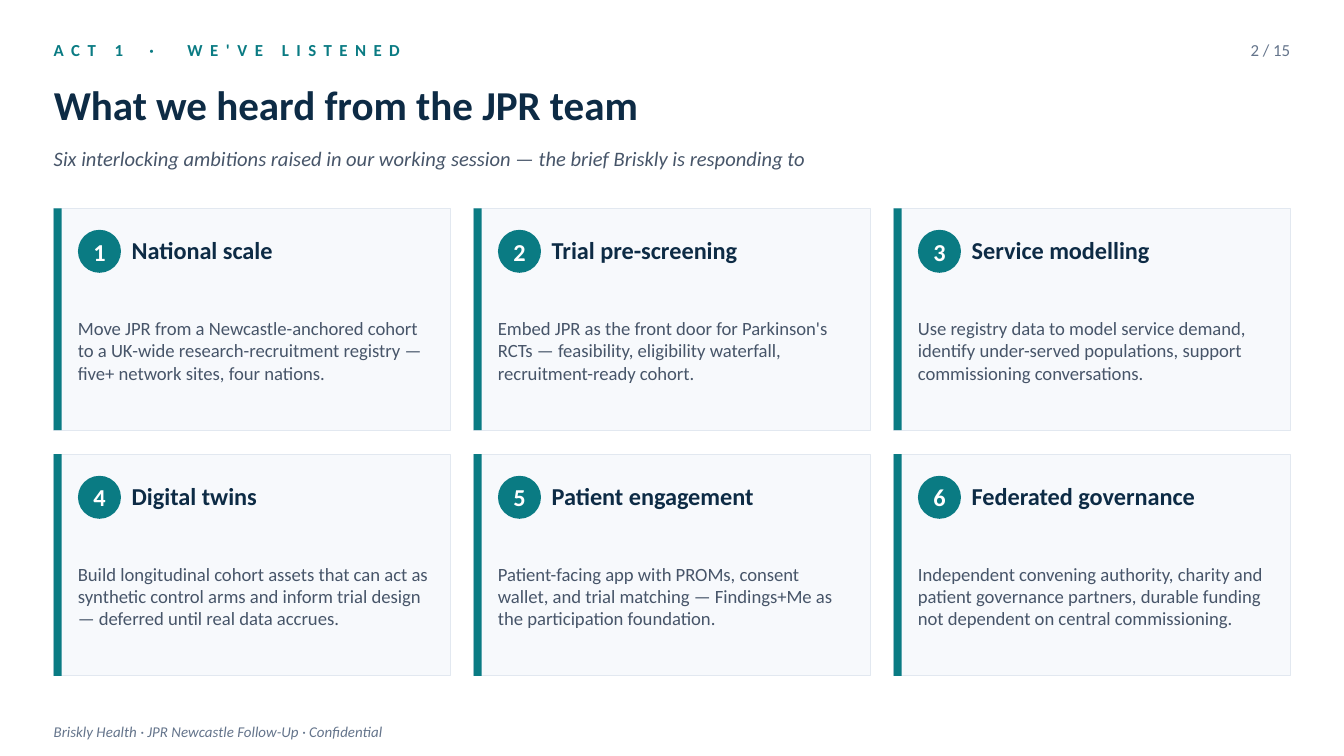
from pptx import Presentation
from pptx.dml.color import RGBColor as RGB
from pptx.enum.shapes import MSO_SHAPE as SHAPE
from pptx.enum.text import MSO_ANCHOR as ANCHOR, MSO_AUTO_SIZE as AUTO, PP_ALIGN as ALIGN
from pptx.util import Inches, Pt

COLORS = {
    "teal": "0A7B83", "navy": "0D2B45", "slate": "475569", "grey": "64748B",
    "card": "F7F9FC", "border": "E2E8F0", "white": "FFFFFF",
}
CARDS = [
    ("National scale", "Move JPR from a Newcastle-anchored cohort to a UK-wide "
     "research-recruitment registry — five+ network sites, four nations."),
    ("Trial pre-screening", "Embed JPR as the front door for Parkinson's RCTs — "
     "feasibility, eligibility waterfall, recruitment-ready cohort."),
    ("Service modelling", "Use registry data to model service demand, identify "
     "under-served populations, support commissioning conversations."),
    ("Digital twins", "Build longitudinal cohort assets that can act as synthetic "
     "control arms and inform trial design — deferred until real data accrues."),
    ("Patient engagement", "Patient-facing app with PROMs, consent wallet, and trial "
     "matching — Findings+Me as the participation foundation."),
    ("Federated governance", "Independent convening authority, charity and patient "
     "governance partners, durable funding not dependent on central commissioning."),
]


def write(sp, runs, size, color, bold=False, italic=False, align=ALIGN.LEFT):
    """Fill a shape with one paragraph made of the given runs, without insets."""
    tf = sp.text_frame
    tf.word_wrap = True
    tf.auto_size = AUTO.NONE
    tf.vertical_anchor = ANCHOR.MIDDLE
    tf.margin_left = tf.margin_right = tf.margin_top = tf.margin_bottom = 0
    p = tf.paragraphs[0]
    p.alignment = align
    for text in runs:
        r = p.add_run()
        r.text = text
        r.font.name, r.font.size = "Calibri", Pt(size)
        r.font.bold, r.font.italic = bold, italic
        r.font.color.rgb = RGB.from_string(COLORS[color])
    return p


def add_block(kind, x, y, w, h, fill, line=None):
    sp = s.shapes.add_shape(kind, Inches(x), Inches(y), Inches(w), Inches(h))
    sp.shadow.inherit = False
    sp.fill.solid()
    sp.fill.fore_color.rgb = RGB.from_string(COLORS[fill])
    if line:
        sp.line.color.rgb = RGB.from_string(COLORS[line])
        sp.line.width = Pt(0.5)
    else:
        sp.line.fill.background()
    return sp


prs = Presentation()
prs.slide_width = Inches(10)
prs.slide_height = prs.slide_width * 9 // 16
s = prs.slides.add_slide(prs.slide_layouts[5])

MARGIN, WIDTH = 0.4, 9.2

# Header and footer
title = s.shapes.title
title.left, title.top = Inches(MARGIN), Inches(0.5)
title.width, title.height = Inches(WIDTH), Inches(0.55)
write(title, ["What we heard from the JPR team"], 22, "navy", bold=True)

box = s.shapes.add_textbox(Inches(MARGIN), Inches(0.22), Inches(6), Inches(0.3))
p = write(box, ["ACT 1", " · ", "WE'VE LISTENED"], 9, "teal", bold=True)
for r, spacing in zip(p.runs, (4, 8, 4)):
    r.font._element.set("spc", str(spacing * 100))

for text, y, h, size, color, italic, align in [
    ("2 / 15", 0.22, 0.3, 9, "grey", False, ALIGN.RIGHT),
    ("Six interlocking ambitions raised in our working session — "
     "the brief Briskly is responding to", 1.02, 0.32, 11, "slate", True, ALIGN.LEFT),
    ("Briskly Health · JPR Newcastle Follow-Up · Confidential",
     5.33, 0.22, 8, "grey", True, ALIGN.LEFT),
]:
    x, w = (9.1, 0.5) if align == ALIGN.RIGHT else (MARGIN, WIDTH)
    box = s.shapes.add_textbox(Inches(x), Inches(y), Inches(w), Inches(h))
    write(box, [text], size, color, italic=italic, align=align)

# Grid of numbered cards
COLS, CARD_W, CARD_H = 3, 2.95, 1.65
COL_STEP = (WIDTH - CARD_W) / (COLS - 1)
ROW_STEP = CARD_H + 0.18
PAD, BADGE = 0.18, 0.32

for i, (heading, body) in enumerate(CARDS):
    row, col = divmod(i, COLS)
    x, y = MARGIN + col * COL_STEP, 1.55 + row * ROW_STEP
    add_block(SHAPE.RECTANGLE, x, y, CARD_W, CARD_H, "card", "border")
    add_block(SHAPE.RECTANGLE, x, y, 0.06, CARD_H, "teal")
    badge = add_block(SHAPE.OVAL, x + PAD, y + 0.16, BADGE, BADGE, "teal")
    write(badge, [str(i + 1)], 13, "white", bold=True, align=ALIGN.CENTER)
    box = s.shapes.add_textbox(Inches(x + 0.58), Inches(y + 0.14), Inches(2.25), Inches(0.34))
    write(box, [heading], 13, "navy", bold=True)
    box = s.shapes.add_textbox(Inches(x + PAD), Inches(y + 0.58), Inches(2.63), Inches(0.95))
    write(box, [body], 10, "slate")

prs.save("out.pptx")
